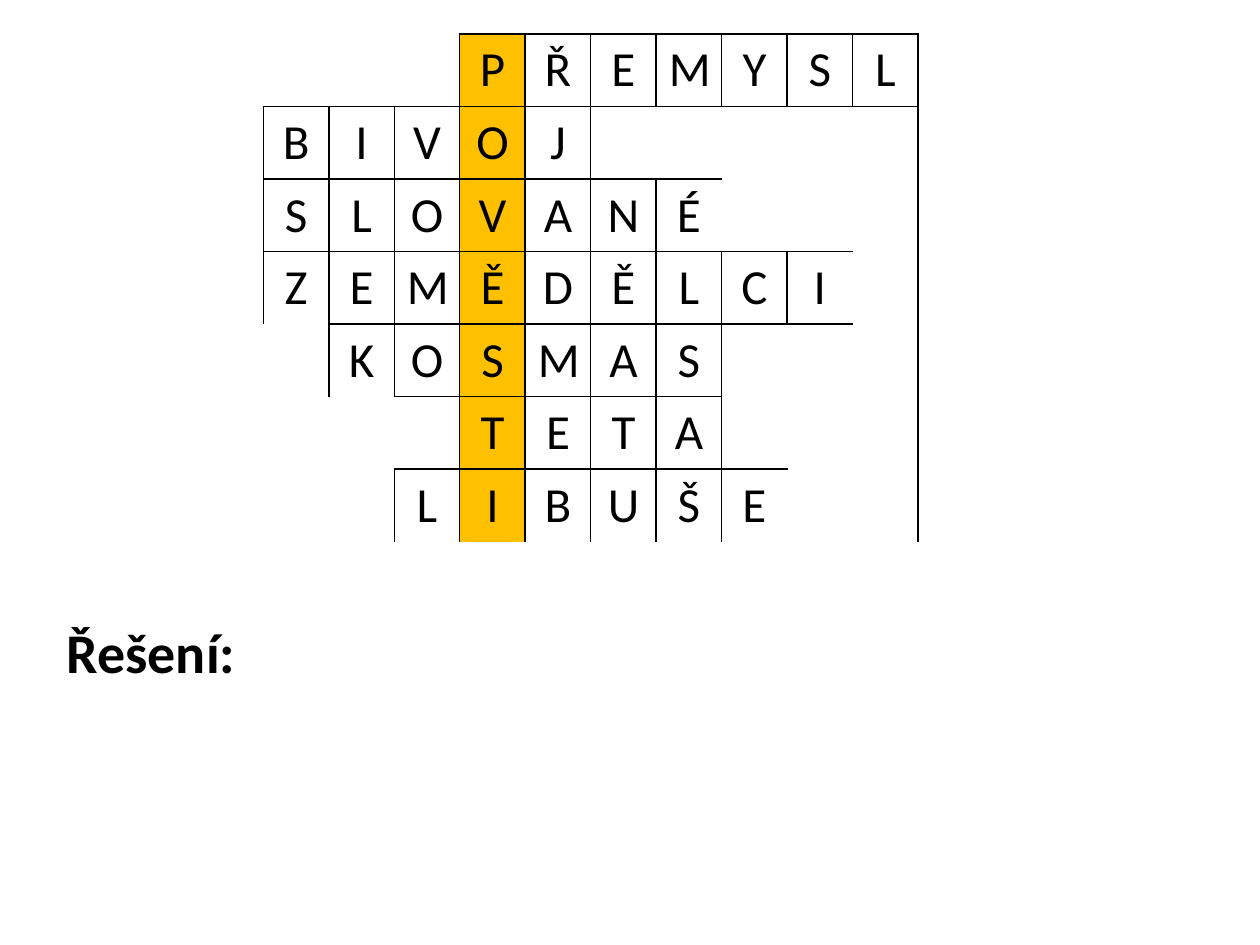
import pptx
import pptx.util
import pptx.dml.color
import pptx.enum.text
import pptx.oxml.ns
from lxml import etree

Inches, Pt = pptx.util.Inches, pptx.util.Pt
RGB = pptx.dml.color.RGBColor.from_string

COLORS = {"ink": "000000", "solution": "FFC000"}
FONT = "Calibri"

# Crossword answers: first column and word, one per row
ANSWERS = [
    (4, "PŘEMYSL"),
    (1, "BIVOJ"),
    (1, "SLOVANÉ"),
    (1, "ZEMĚDĚLCI"),
    (2, "KOSMAS"),
    (4, "TETA"),
    (3, "LIBUŠE"),
]
SOLUTION_COLUMN = 4

# Blank areas: row, column, rows, columns, ruled sides
BLANKS = [
    (0, 0, 1, 4, "R"),
    (0, 11, 7, 1, "L"),
    (1, 0, 1, 1, "R"),
    (1, 6, 1, 2, "LTB"),
    (1, 8, 2, 2, "TB"),
    (1, 10, 6, 1, "T"),
    (2, 0, 2, 1, "R"),
    (4, 0, 1, 2, "R"),
    (4, 8, 2, 1, "LTB"),
    (4, 9, 3, 1, "T"),
    (5, 0, 2, 3, ""),
    (5, 3, 1, 1, "TRB"),
    (7, 0, 1, 12, "B"),
]
COLUMN_WIDTHS = [2.09] + [0.52] * 11
ROW_HEIGHTS = [0.57] * len(ANSWERS) + [3.24]


def style(paragraph, size, bold=False):
    paragraph.font.name = FONT
    paragraph.font.size = Pt(size)
    paragraph.font.bold = bold
    paragraph.font.color.rgb = RGB(COLORS["ink"])


def rule_cell(cell, sides):
    """Draw the given sides and leave the others clear."""
    qn = pptx.oxml.ns.qn
    properties = cell._tc.get_or_add_tcPr()
    for side in "LRTB":
        line = etree.SubElement(properties, qn(f"a:ln{side}"), w=str(Pt(1)))
        if side in sides:
            fill = etree.SubElement(line, qn("a:solidFill"))
            etree.SubElement(fill, qn("a:srgbClr"), val=COLORS["ink"])
        else:
            etree.SubElement(line, qn("a:noFill"))


prs = pptx.Presentation()
prs.slide_width, prs.slide_height = Inches(10), Inches(7.5)
slide = prs.slides.add_slide(prs.slide_layouts[6])

# Crossword grid
crossword = slide.shapes.add_table(
    len(ROW_HEIGHTS), len(COLUMN_WIDTHS), Inches(0), Inches(0.27),
    Inches(sum(COLUMN_WIDTHS)), Inches(sum(ROW_HEIGHTS))).table
crossword.first_row = crossword.horz_banding = False
for column, width in zip(crossword.columns, COLUMN_WIDTHS):
    column.width = Inches(width)
for row, height in zip(crossword.rows, ROW_HEIGHTS):
    row.height = Inches(height)

# Letters
for r, (start, word) in enumerate(ANSWERS):
    for c, letter in enumerate(word, start):
        cell = crossword.cell(r, c)
        rule_cell(cell, "LRTB")
        if c == SOLUTION_COLUMN:
            cell.fill.solid()
            cell.fill.fore_color.rgb = RGB(COLORS["solution"])
        else:
            cell.fill.background()
        paragraph = cell.text_frame.paragraphs[0]
        paragraph.text = letter
        paragraph.alignment = pptx.enum.text.PP_ALIGN.CENTER
        style(paragraph, 28)

# Blank areas, ruled only along their outer edges
for top, left, height, width, sides in BLANKS:
    bottom, right = top + height - 1, left + width - 1
    for r in range(top, bottom + 1):
        for c in range(left, right + 1):
            outer = {"L": c == left, "R": c == right,
                     "T": r == top, "B": r == bottom}
            cell = crossword.cell(r, c)
            rule_cell(cell, [side for side in sides if outer[side]])
            cell.fill.background()
    if height * width > 1:
        crossword.cell(top, left).merge(crossword.cell(bottom, right))

# Solution label
solution = slide.shapes.add_textbox(
    Inches(0.43), Inches(4.85), Inches(1.55), Inches(0.64)).text_frame
solution.word_wrap = False
solution.auto_size = pptx.enum.text.MSO_AUTO_SIZE.SHAPE_TO_FIT_TEXT
solution.text = "Řešení:"
style(solution.paragraphs[0], 32, bold=True)

prs.save("out.pptx")
